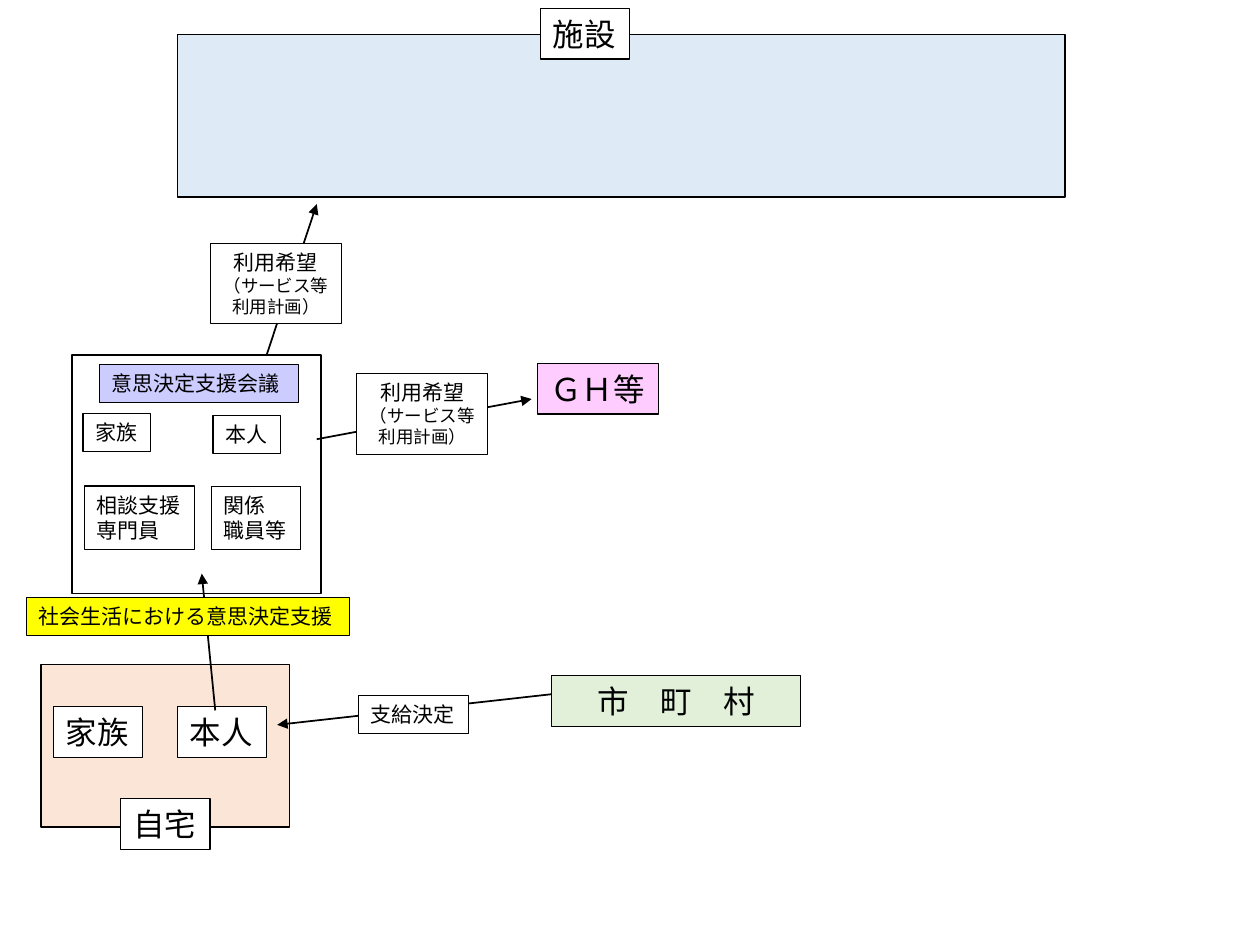
import dataclasses

import pptx
import pptx.dml.color
import pptx.enum.shapes
import pptx.enum.text
import pptx.oxml
import pptx.oxml.ns
import pptx.util

Pt = pptx.util.Pt
Align = pptx.enum.text.PP_ALIGN


@dataclasses.dataclass(frozen=True)
class Theme:
    font: str = "Calibri"
    ink: str = "000000"
    white: str = "FFFFFF"
    peach: str = "FBE5D6"
    blue: str = "DEEBF7"
    pink: str = "FFCCFF"
    yellow: str = "FFFF00"
    green: str = "E2F0D9"
    lilac: str = "CCCCFF"
    large: float = 18
    small: float = 12
    note: float = 10
    thick: float = 1
    thin: float = 0.75


class Chart:
    """Draws the flow chart's parts; all lengths are in points."""

    def __init__(self, slide, theme):
        self.slide = slide
        self.theme = theme

    def paint(self, line, width):
        line.color.rgb = pptx.dml.color.RGBColor.from_string(self.theme.ink)
        line.width = Pt(width)

    def frame(self, left, top, width, height, fill, edge=None):
        """Add a rectangle; a fill of None leaves it clear."""
        box = self.slide.shapes.add_shape(
            pptx.enum.shapes.MSO_SHAPE.RECTANGLE,
            Pt(left), Pt(top), Pt(width), Pt(height))
        box.shadow.inherit = False
        if fill:
            box.fill.solid()
            box.fill.fore_color.rgb = pptx.dml.color.RGBColor.from_string(fill)
        else:
            box.fill.background()
        self.paint(box.line, edge or self.theme.thick)
        return box

    def label(self, text, left, top, width, height, size, fill,
              align=Align.LEFT, wrap=False):
        box = self.frame(left, top, width, height, fill, self.theme.thin)
        body = box.text_frame
        body.text = text
        body.word_wrap = wrap
        body.auto_size = pptx.enum.text.MSO_AUTO_SIZE.SHAPE_TO_FIT_TEXT
        body.vertical_anchor = pptx.enum.text.MSO_ANCHOR.TOP
        for para in body.paragraphs:
            para.alignment = align
            for run in para.runs:
                run.font.name = self.theme.font
                run.font.size = Pt(size)
                run.font.color.rgb = pptx.dml.color.RGBColor.from_string(
                    self.theme.ink)
        return box

    def large(self, text, left, top, width=51, fill=None, align=Align.LEFT):
        return self.label(text, left, top, width, 29, self.theme.large,
                          fill or self.theme.white, align)

    def small(self, text, left, top, width, height=21.8, fill=None, wrap=False):
        return self.label(text, left, top, width, height, self.theme.small,
                          fill, wrap=wrap)

    def wish(self, left, top):
        """Add the request for use, with its plan in smaller type."""
        box = self.label("利用希望\n（サービス等利用計画）", left, top, 75, 46,
                         self.theme.small, self.theme.white,
                         Align.CENTER, True)
        for run in box.text_frame.paragraphs[1].runs:
            run.font.size = Pt(self.theme.note)

    def arrow(self, start, end):
        link = self.slide.shapes.add_connector(
            pptx.enum.shapes.MSO_CONNECTOR.STRAIGHT,
            *(Pt(value) for value in (*start, *end)))
        self.paint(link.line, self.theme.thick)
        space = pptx.oxml.ns.nsdecls("a")
        link.line._get_or_add_ln().append(pptx.oxml.parse_xml(
            f'<a:tailEnd {space} type="triangle"/>'))
        link._element.spPr.append(pptx.oxml.parse_xml(
            f'<a:effectLst {space}/>'))


def main():
    deck = pptx.Presentation()
    deck.slide_width, deck.slide_height = Pt(720), Pt(540)
    theme = Theme()
    chart = Chart(deck.slides.add_slide(deck.slide_layouts[6]), theme)

    # Facility and home
    chart.frame(23.5, 379.7, 142, 93, theme.peach)
    chart.frame(101.5, 19.7, 507, 93, theme.blue)
    chart.large("施設", 308.7, 4.8)
    chart.large("本人", 101.4, 403.7)
    chart.large("家族", 30.6, 403.7)
    chart.large("自宅", 69, 456.4)
    chart.arrow((152.5, 202.5), (181, 116.6))
    chart.arrow((315.3, 396.7), (158.4, 414.2))

    # Meeting and its members
    chart.frame(41.3, 202.8, 142, 136.4, theme.white)
    chart.small("本人", 121.7, 237.4, 38.6)
    chart.small("家族", 47.5, 236.4, 38.6)
    chart.small("相談支援\n専門員", 48.3, 277.7, 63, 36.2)
    chart.small("関係\n職員等", 120.9, 278, 51, 36.2)
    chart.small("意思決定支援会議", 56.7, 208.2, 114, fill=theme.lilac, wrap=True)

    # Requests, decision and support
    chart.large("ＧＨ等", 307.3, 207.6, 69, theme.pink)
    chart.arrow((181, 251), (303.8, 228))
    chart.small("支給決定", 204.7, 397.4, 63, fill=theme.white)
    chart.wish(120.2, 139)
    chart.wish(203.8, 213.6)
    chart.arrow((123, 406), (115.3, 327.8))
    chart.small("社会生活における意思決定支援", 15.1, 341.4, 184.5,
                fill=theme.yellow)
    chart.large("市　町　村", 315.3, 386.2, 142, theme.green, Align.CENTER)

    deck.save("out.pptx")


if __name__ == "__main__":
    main()
